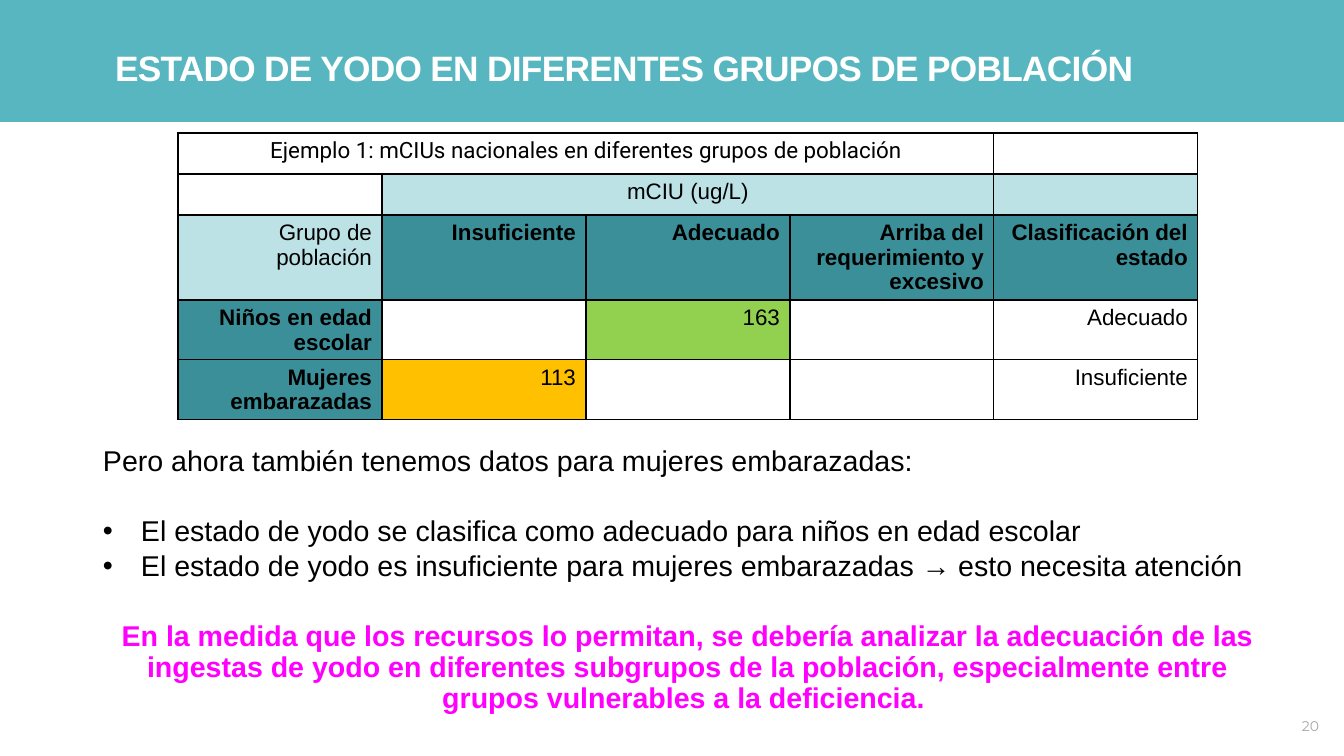
from dataclasses import dataclass

from lxml import etree
from pptx import Presentation
from pptx.dml.color import RGBColor
from pptx.enum.shapes import MSO_SHAPE
from pptx.enum.text import MSO_ANCHOR, MSO_AUTO_SIZE, PP_ALIGN
from pptx.oxml.ns import qn
from pptx.table import Table, _Cell
from pptx.text.text import TextFrame, _Paragraph, _Run
from pptx.util import Emu, Pt

RECTANGLE = MSO_SHAPE.RECTANGLE
TOP, BOTTOM = MSO_ANCHOR.TOP, MSO_ANCHOR.BOTTOM
NO_AUTOFIT = MSO_AUTO_SIZE.NONE
LEFT, CENTER, RIGHT = PP_ALIGN.LEFT, PP_ALIGN.CENTER, PP_ALIGN.RIGHT

WHITE = RGBColor(0xFF, 0xFF, 0xFF)
BLACK = RGBColor(0x00, 0x00, 0x00)
TURQUOISE = RGBColor(0x58, 0xB6, 0xC0)
PALE_TEAL = RGBColor(0xBC, 0xE2, 0xE6)
DEEP_TEAL = RGBColor(0x3A, 0x8F, 0x98)
GREEN = RGBColor(0x92, 0xD0, 0x50)
AMBER = RGBColor(0xFF, 0xC0, 0x00)
MAGENTA = RGBColor(0xFF, 0x00, 0xFF)
GRAY = RGBColor(0xA7, 0xA7, 0xA7)

SLIDE_WIDTH, SLIDE_HEIGHT = 1344, 756
EMU_PER_PX = 12192000 / SLIDE_WIDTH
COLUMN_WIDTH = 204
ROW_HEIGHTS = (41, 41, 85, 60, 60)
BULLET_INDENT = 38


def px(length: int) -> Emu:
    return Emu(round(length * EMU_PER_PX))


@dataclass(frozen=True)
class Area:
    left: int
    top: int
    width: int
    height: int

    def emu(self) -> tuple[Emu, Emu, Emu, Emu]:
        return px(self.left), px(self.top), px(self.width), px(self.height)


@dataclass(frozen=True)
class TextStyle:
    size: float
    color: RGBColor = BLACK
    bold: bool = False
    font: str = "Arial"


@dataclass(frozen=True)
class CellContent:
    text: str = ""
    fill: RGBColor | None = None
    bold: bool = False
    align: PP_ALIGN = RIGHT
    font: str = "Arial"
    columns: int = 1


@dataclass(frozen=True)
class BodyLine:
    text: str
    space_before: int = 3
    bullet: bool = False
    align: PP_ALIGN = LEFT
    style: TextStyle = TextStyle(20.4)


def heading(text: str) -> CellContent:
    return CellContent(text, DEEP_TEAL, bold=True)


EMPTY = CellContent()
TABLE_ROWS = (
    (CellContent("Ejemplo 1: mCIUs nacionales en diferentes grupos de población",
                 align=CENTER, font="Roboto", columns=4), EMPTY),
    (EMPTY, CellContent("mCIU (ug/L)", PALE_TEAL, align=CENTER, columns=3),
     CellContent(fill=PALE_TEAL)),
    (CellContent("Grupo de población", PALE_TEAL), heading("Insuficiente"),
     heading("Adecuado"), heading("Arriba del requerimiento y excesivo"),
     heading("Clasificación del estado")),
    (heading("Niños en edad escolar"), EMPTY, CellContent("163", GREEN), EMPTY,
     CellContent("Adecuado")),
    (heading("Mujeres embarazadas"), CellContent("113", AMBER), EMPTY, EMPTY,
     CellContent("Insuficiente")),
)
BODY_LINES = (
    BodyLine("Pero ahora también tenemos datos para mujeres embarazadas:", 0),
    BodyLine("El estado de yodo se clasifica como adecuado para niños en edad escolar",
             28, bullet=True),
    BodyLine("El estado de yodo es insuficiente para mujeres embarazadas → "
             "esto necesita atención", bullet=True),
    BodyLine("En la medida que los recursos lo permitan, se debería analizar la "
             "adecuación de las ingestas de yodo en diferentes subgrupos de la "
             "población, especialmente entre grupos vulnerables a la deficiencia. ",
             28, align=CENTER, style=TextStyle(20.4, MAGENTA, bold=True)),
)


def add_run(para: _Paragraph, text: str, style: TextStyle) -> _Run:
    run = para.add_run()
    run.text = text
    run.font.name = style.font
    run.font.size = Pt(style.size)
    run.font.bold = style.bold
    run.font.color.rgb = style.color
    return run


def prepare_frame(frame: TextFrame, anchor: MSO_ANCHOR, wrap: bool = True) -> None:
    frame.margin_left = frame.margin_top = frame.margin_right = frame.margin_bottom = 0
    frame.auto_size = NO_AUTOFIT
    frame.word_wrap = wrap
    frame.vertical_anchor = anchor


def set_bullet(para: _Paragraph, bullet: bool) -> None:
    properties = para._p.get_or_add_pPr()
    indent = px(BULLET_INDENT) if bullet else 0
    properties.set("marL", str(indent))
    properties.set("indent", str(-indent))
    if bullet:
        etree.SubElement(properties, qn("a:buFont"), typeface="Arial")
        etree.SubElement(properties, qn("a:buChar"), char="•")
    else:
        etree.SubElement(properties, qn("a:buNone"))


def fill_body(frame: TextFrame) -> None:
    for index, line in enumerate(BODY_LINES):
        para = frame.add_paragraph() if index else frame.paragraphs[0]
        set_bullet(para, line.bullet)
        para.alignment = line.align
        para.line_spacing = 0.9
        para.space_before = Pt(line.space_before)
        add_run(para, line.text, line.style)


def add_borders(cell: _Cell) -> None:
    properties = cell._tc.get_or_add_tcPr()
    for side in ("lnL", "lnR", "lnT", "lnB"):
        border = etree.SubElement(properties, qn(f"a:{side}"), w=str(Pt(1)))
        solid = etree.SubElement(border, qn("a:solidFill"))
        etree.SubElement(solid, qn("a:srgbClr"), val=str(BLACK))


def fill_table(table: Table) -> None:
    table.first_row = table.horz_banding = False
    for column in table.columns:
        column.width = px(COLUMN_WIDTH)
    for row, height in zip(table.rows, ROW_HEIGHTS):
        row.height = px(height)
    for cell in table.iter_cells():
        add_borders(cell)
        cell.fill.background()
    for row_index, contents in enumerate(TABLE_ROWS):
        column_index = 0
        for content in contents:
            cell = table.cell(row_index, column_index)
            column_index += content.columns
            if content.columns > 1:
                cell.merge(table.cell(row_index, column_index - 1))
            if content.fill is not None:
                cell.fill.solid()
                cell.fill.fore_color.rgb = content.fill
            if content.text:
                para = cell.text_frame.paragraphs[0]
                para.alignment = content.align
                add_run(para, content.text,
                        TextStyle(16, bold=content.bold, font=content.font))


def main() -> None:
    deck = Presentation()
    deck.slide_width, deck.slide_height = px(SLIDE_WIDTH), px(SLIDE_HEIGHT)
    page = deck.slides.add_slide(deck.slide_layouts[1])
    title, body = page.placeholders

    band = page.shapes.add_shape(RECTANGLE, *Area(0, 0, SLIDE_WIDTH, 122).emu())
    band.shadow.inherit = False
    band.fill.solid()
    band.fill.fore_color.rgb = TURQUOISE
    band.line.fill.background()
    title._element.addprevious(band._element)

    title.left, title.top, title.width, title.height = Area(115, 34, 1111, 55).emu()
    prepare_frame(title.text_frame, BOTTOM)
    para = title.text_frame.paragraphs[0]
    para.alignment = LEFT
    para.line_spacing = Pt(25)
    run = add_run(para, "ESTADO DE YODO EN DIFERENTES GRUPOS DE POBLACIÓN",
                  TextStyle(25.2, WHITE, bold=True))
    run.font._element.set("spc", "-50")

    columns = len(TABLE_ROWS[-1])
    area = Area(178, 133, columns * COLUMN_WIDTH, sum(ROW_HEIGHTS))
    frame = page.shapes.add_table(len(TABLE_ROWS), columns, *area.emu())
    fill_table(frame.table)

    body.left, body.top, body.width, body.height = Area(103, 447, 1169, 279).emu()
    prepare_frame(body.text_frame, TOP)
    fill_body(body.text_frame)

    number = page.shapes.add_textbox(*Area(1301, 718, 19, 17).emu())
    prepare_frame(number.text_frame, TOP, wrap=False)
    para = number.text_frame.paragraphs[0]
    para.alignment = CENTER
    add_run(para, "20", TextStyle(10, GRAY, font="Montserrat"))

    deck.save("out.pptx")


if __name__ == "__main__":
    main()
